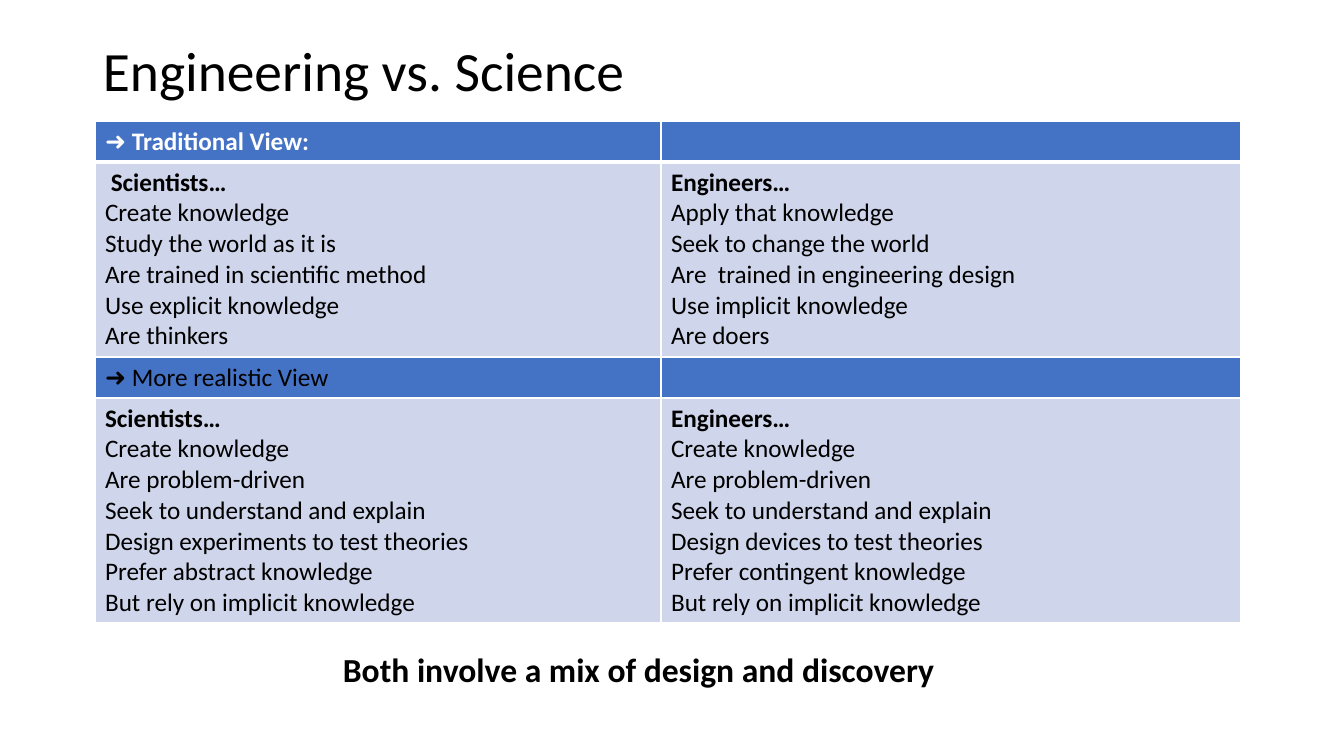
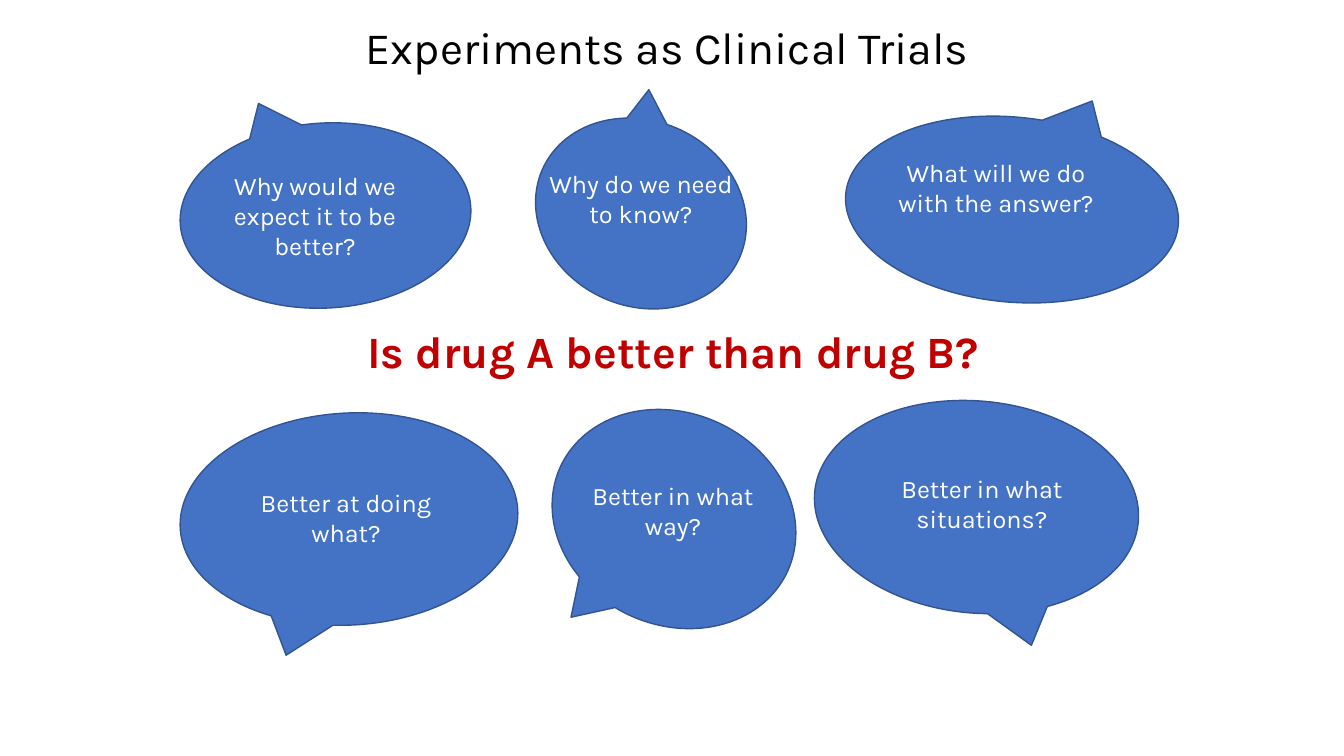
import pptx
import pptx.util
import pptx.dml.color
import pptx.enum.shapes
import pptx.enum.text
import pptx.oxml.ns
import lxml.etree

SCALE = 914400 / 100.8
SANS, KARLA = "Calibri", "Karla"
BLACK, WHITE, RED = "000000", "FFFFFF", "C00000"
BLUE, EDGE, PALE = "4472C4", "325491", "CFD5EA"
LEFT = pptx.enum.text.PP_ALIGN.LEFT
MID = pptx.enum.text.PP_ALIGN.CENTER

VIEWS = [
    ("➜ Traditional View:", WHITE, True, 195, [
        [" Scientists…", "Create knowledge", "Study the world as it is",
         "Are trained in scientific method", "Use explicit knowledge",
         "Are thinkers"],
        ["Engineers…", "Apply that knowledge", "Seek to change the world",
         "Are  trained in engineering design", "Use implicit knowledge",
         "Are doers"]]),
    ("➜ More realistic View", BLACK, False, 225, [
        ["Scientists…", "Create knowledge", "Are problem-driven",
         "Seek to understand and explain",
         "Design experiments to test theories",
         "Prefer abstract knowledge", "But rely on implicit knowledge"],
        ["Engineers…", "Create knowledge", "Are problem-driven",
         "Seek to understand and explain", "Design devices to test theories",
         "Prefer contingent knowledge", "But rely on implicit knowledge"]]),
]

TILTS = [(176.8, -1), (204.9, -1), (185.4, 1)]
ASKS = [
    (1, [
        ((180, 123, 291, 185), (26, 42), "Why would we expect it to be better?"),
        ((533, 121, 216, 185), (-1, 42), "Why do we need to know?"),
        ((845, 117, 334, 185), (42, 35), "What will we do with the answer?")]),
    (-1, [
        ((180, 413, 338, 212), (57, 69), "Better at doing what?"),
        ((549, 413, 250, 212), (15, 62), "Better in what way?"),
        ((814, 401, 325, 212), (59, 67), "Better in what situations?")]),
]


def px(size):
    """Turn px into EMU."""
    return pptx.util.Emu(round(size * SCALE))


def tint(code):
    """Turn a hex string into a colour."""
    return pptx.dml.color.RGBColor.from_string(code)


def paint(thing, code):
    """Give a shape or cell a solid fill."""
    thing.fill.solid()
    thing.fill.fore_color.rgb = tint(code)


def write(para, text, size, face, code, bold=False):
    """Add one styled run to a paragraph."""
    run = para.add_run()
    run.text = text
    run.font.size = pptx.util.Pt(size)
    run.font.name = face
    run.font.bold = bold
    run.font.color.rgb = tint(code)


def label(slide, box, text, size, face, code, bold=False, align=MID):
    """Place a wrapped line of text in a box and return its frame."""
    frame = slide.shapes.add_textbox(*map(px, box)).text_frame
    frame.word_wrap = True
    para = frame.paragraphs[0]
    para.alignment = align
    write(para, text, size, face, code, bold)
    return frame


def rule(cell, widths):
    """Draw white cell borders from a map of side to points."""
    props = cell._tc.get_or_add_tcPr()
    for spot, (side, width) in enumerate(widths.items()):
        line = lxml.etree.Element(pptx.oxml.ns.qn("a:ln" + side))
        line.set("w", str(pptx.util.Pt(width)))
        fill = lxml.etree.SubElement(line, pptx.oxml.ns.qn("a:solidFill"))
        hue = lxml.etree.SubElement(fill, pptx.oxml.ns.qn("a:srgbClr"))
        hue.set("val", WHITE)
        props.insert(spot, line)


def fill_cell(cell, lines, back, code, bold):
    """Fill a cell with lines, the first of them bold on demand."""
    paint(cell, back)
    frame = cell.text_frame
    for spot, text in enumerate(lines):
        para = frame.add_paragraph() if spot else frame.paragraphs[0]
        write(para, text, 18, SANS, code, bold and spot == 0)


def view_table(slide, box, widths, head):
    """Build the table of views, a band and a body row for each."""
    count = 2 * len(VIEWS)
    table = slide.shapes.add_table(count, len(widths), *map(px, box)).table
    table.horz_banding = False
    for col, width in zip(table.columns, widths):
        col.width = px(width)
    for spot, (name, code, bold, high, sides) in enumerate(VIEWS):
        band, body = 2 * spot, 2 * spot + 1
        table.rows[band].height = px(head)
        table.rows[body].height = px(high)
        for col, lines in enumerate(sides):
            top = [] if col else [name]
            fill_cell(table.cell(band, col), top, BLUE, code, bold)
            fill_cell(table.cell(body, col), lines, PALE, BLACK, True)
    for row in range(count):
        for col in range(len(widths)):
            rule(table.cell(row, col), {
                "L": 1, "R": 1, "T": 3 if row == 1 else 1,
                "B": 3 if row == 0 else 1})


def bubble(slide, box, turn, side, rise, shift, text):
    """Draw a turned callout with upright text at a shift from its corner."""
    kind = pptx.enum.shapes.MSO_SHAPE.OVAL_CALLOUT
    shape = slide.shapes.add_shape(kind, *map(px, box))
    shape.rotation = turn
    shape.adjustments[0] *= side
    shape.adjustments[1] *= rise
    shape.shadow.inherit = False
    paint(shape, BLUE)
    shape.line.color.rgb = tint(EDGE)
    shape.line.width = pptx.util.Pt(1)
    spot = (box[0] + shift[0], box[1] + shift[1], 218, 72)
    label(slide, spot, text, 18, KARLA, WHITE)


def versus(slide):
    """Build the slide that compares two fields."""
    frame = label(slide, (93, 40, 1159, 67), "Engineering vs. Science",
                  39.6, SANS, BLACK, align=LEFT)
    frame.vertical_anchor = pptx.enum.text.MSO_ANCHOR.MIDDLE
    frame.paragraphs[0].line_spacing = 0.9
    view_table(slide, (95, 121, 1146, 502), (566, 580), 41)
    label(slide, (333, 644, 672, 50),
          "Both involve a mix of design and discovery",
          24, SANS, BLACK, True, LEFT)


def trials(slide):
    """Build the slide of questions around a central one."""
    label(slide, (225, 15, 885, 65), "Experiments as Clinical Trials",
          32, KARLA, BLACK)
    label(slide, (286, 319, 775, 65), "Is drug A better than drug B?",
          32, KARLA, RED, True)
    for rise, row in ASKS:
        for (turn, side), (box, shift, text) in zip(TILTS, row):
            bubble(slide, box, turn, side, rise, shift, text)


def main():
    """Build and save the deck."""
    deck = pptx.Presentation()
    deck.slide_width, deck.slide_height = px(1344), px(756)
    for build in (versus, trials):
        build(deck.slides.add_slide(deck.slide_layouts[6]))
    deck.save("out.pptx")


if __name__ == "__main__":
    main()
